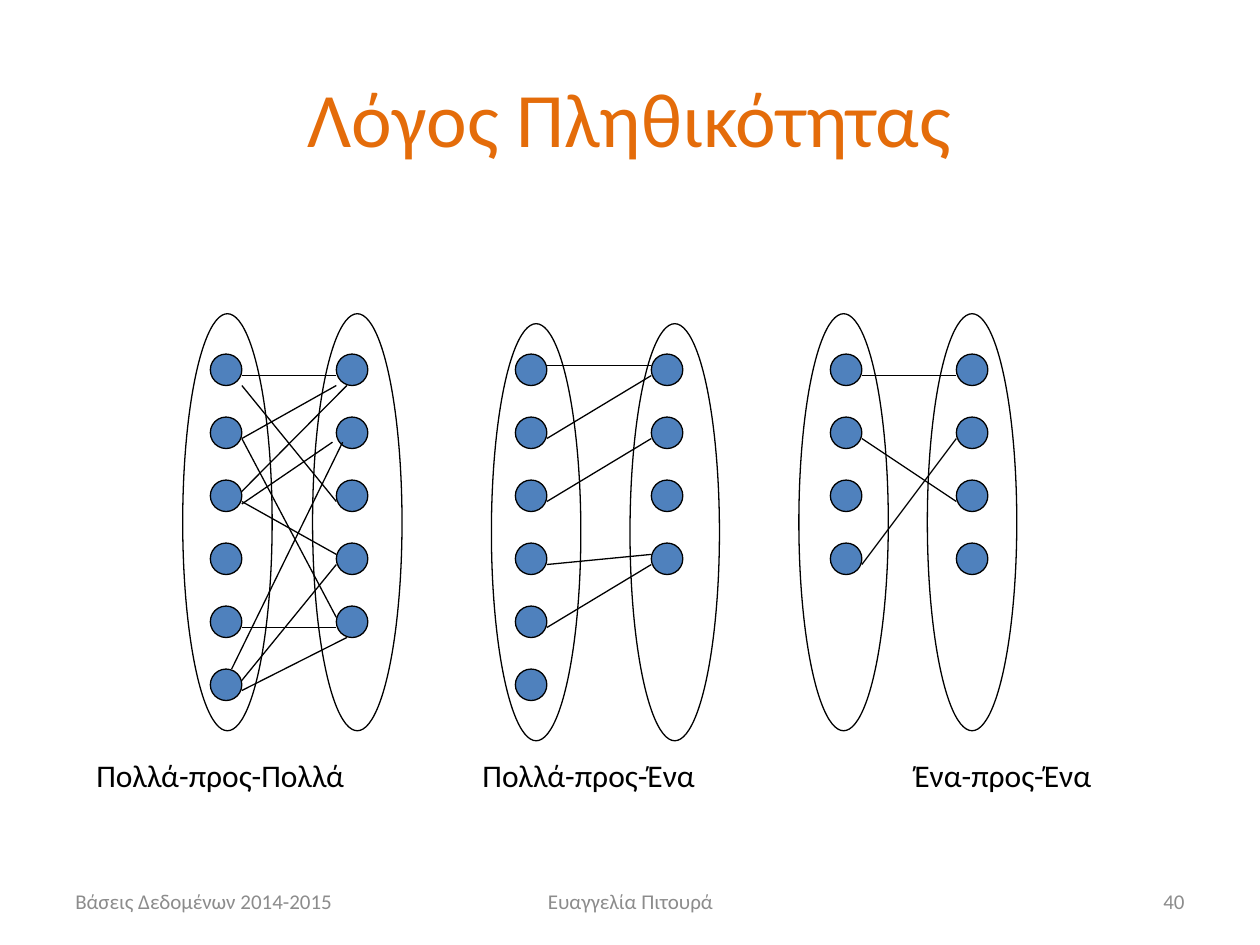
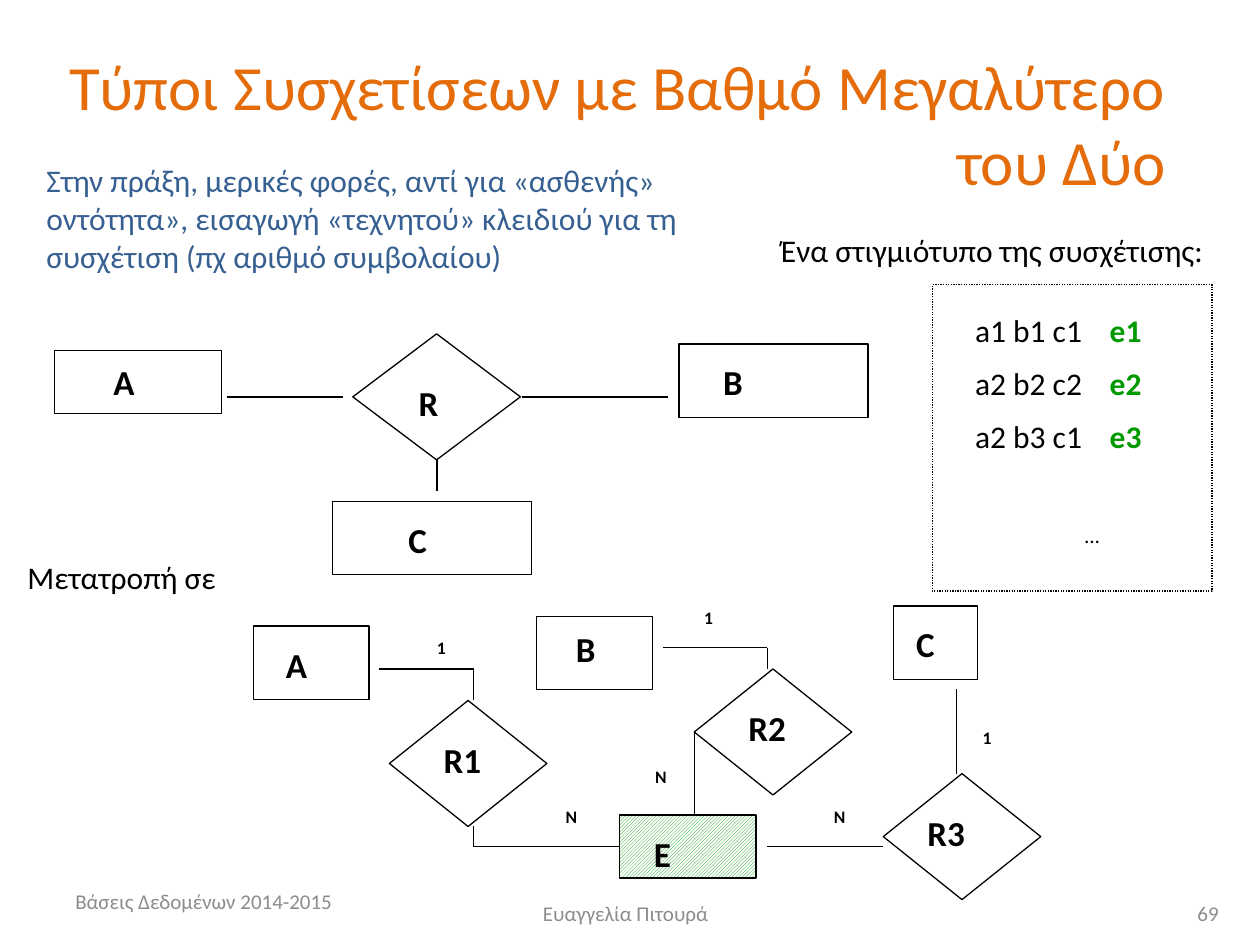
from itertools import pairwise

from lxml.etree import SubElement
from pptx import Presentation
from pptx.dml.color import RGBColor
from pptx.enum.dml import MSO_LINE, MSO_PATTERN
from pptx.enum.shapes import MSO_CONNECTOR, MSO_SHAPE
from pptx.enum.text import MSO_ANCHOR, PP_ALIGN
from pptx.oxml.ns import qn
from pptx.util import Pt

FONT = "Calibri"
COLORS = {
    name: RGBColor.from_string(code)
    for name, code in {
        "title": "E46C0A", "footer": "8C8C8C", "ink": "000000", "dot": "4F81BD",
        "remark": "376092", "key": "009900", "paper": "FFFFFF",
    }.items()
}
LEFT, CENTER, RIGHT = PP_ALIGN.LEFT, PP_ALIGN.CENTER, PP_ALIGN.RIGHT
OVAL, RECT, DIAMOND = MSO_SHAPE.OVAL, MSO_SHAPE.RECTANGLE, MSO_SHAPE.DIAMOND


def write(shape, text, size, color="ink", bold=False, align=LEFT, anchor=MSO_ANCHOR.TOP):
    """Fill a shape with one paragraph of wrapped text."""
    frame = shape.text_frame
    frame.word_wrap = True
    frame.vertical_anchor = anchor
    paragraph = frame.paragraphs[0]
    paragraph.text = text
    paragraph.alignment = align
    font = paragraph.font
    font.name, font.size, font.bold = FONT, Pt(size), bold
    font.color.rgb = COLORS[color]
    return paragraph


def outline(slide, kind, x, y, w, h, fill=None):
    """Add a thin black preset shape, or a straight line from (x, y) to (w, h) if kind is None."""
    if kind is None:
        item = slide.shapes.add_connector(MSO_CONNECTOR.STRAIGHT, Pt(x), Pt(y), Pt(w), Pt(h))
        SubElement(item._element.spPr, qn("a:effectLst"))
    else:
        item = slide.shapes.add_shape(kind, Pt(x), Pt(y), Pt(w), Pt(h))
        item.shadow.inherit = False
        if fill:
            item.fill.solid()
            item.fill.fore_color.rgb = COLORS[fill]
        else:
            item.fill.background()
    item.line.color.rgb = COLORS["ink"]
    item.line.width = Pt(0.75)
    return item


prs = Presentation()
prs.slide_width, prs.slide_height = Pt(720), Pt(540)

# Title and footer of each slide: boxes are x, y, width, height
pages = [
    ("Λόγος Πληθικότητας", 44, CENTER, (36, 21.6, 648, 90),
     "40", (246.2, 500.4, 228.2, 28.8), (516.2, 500.4, 167.8, 28.8)),
    ("Τύποι Συσχετίσεων με Βαθμό Μεγαλύτερο του Δύο", 36, RIGHT, (25.2, 0, 648, 140.4),
     "69", (241.2, 514.1, 232.6, 15.8), (535.7, 504, 167.8, 36)),
]
slides = []
for heading, size, align, title_box, number, author_box, number_box in pages:
    slide = prs.slides.add_slide(prs.slide_layouts[5])
    title = slide.shapes.title
    title.left, title.top, title.width, title.height = map(Pt, title_box)
    write(title, heading, size, "title", align=align, anchor=MSO_ANCHOR.MIDDLE)
    for text, box, side in [
        ("Βάσεις Δεδομένων 2014-2015", (36, 500.4, 167.8, 28.8), LEFT),
        ("Ευαγγελία Πιτουρά", author_box, CENTER),
        (number, number_box, RIGHT),
    ]:
        footer = slide.shapes.add_textbox(*map(Pt, box))
        write(footer, text, 12, "footer", align=side, anchor=MSO_ANCHOR.MIDDLE)
    slides.append(slide)
ratio_slide, degree_slide = slides

# Cardinality ratios: each set is (dot x, dot count, oval x);
# each link is (left y, right y) and, off the dots' edges, the two x shifts
DOT, DOT_TOP, DOT_STEP = 18, 202.3, 36
mappings = [
    ("Πολλά-προς-Πολλά", 48, 179.3, [(120.2, 6, 104.4), (192.2, 5, 178.6)],
     [(220.3, 286.6), (214.6, 214.6), (250.6, 220.3), (280.8, 220.3, 0, 6),
      (250.6, 352.8), (358.6, 358.6), (394.6, 364.3, 0, 6), (288, 252.7, 0, -2.2),
      (382.3, 252.7, -5.8, 3.6), (388.8, 322.6), (286.6, 316.8)]),
    ("Πολλά-προς-Ένα", 268.6, 185, [(294.5, 6, 280.8), (372.2, 4, 360)],
     [(208.8, 208.8), (250.6, 214.6), (286.6, 250.6), (358.6, 322.6), (322.6, 316.8)]),
    ("Ένα-προς-Ένα", 515.4, 179.3, [(474.5, 4, 456.5), (546.5, 4, 529.9)],
     [(214.6, 214.6), (250.6, 286.6), (322.6, 250.6)]),
]
for caption, caption_x, oval_y, sets, links in mappings:
    for dot_x, count, oval_x in sets:
        for row in range(count):
            outline(ratio_slide, OVAL, dot_x, DOT_TOP + row * DOT_STEP, DOT, DOT, "dot")
        outline(ratio_slide, OVAL, oval_x, oval_y, 51.1, 238.3)
    start_x, end_x = sets[0][0] + DOT, sets[1][0]
    for left_y, right_y, *shifts in links:
        left_shift, right_shift = shifts or (0, 0)
        outline(ratio_slide, None, start_x + left_shift, left_y, end_x + right_shift, right_y)
    label = ratio_slide.shapes.add_textbox(Pt(caption_x), Pt(428.4), Pt(170), Pt(28.8))
    write(label, caption, 18)

# Entities and relationships: kind, name, x, y, width, height, text indent, text drop
nodes = [
    (RECT, "A", 31, 200.2, 95.8, 36, 33.8, 5.8),
    (RECT, "B", 388.1, 196.6, 108, 41.8, 25.2, 9.4),
    (RECT, "C", 190.1, 286.6, 113.8, 41.8, 43.2, 9.4),
    (DIAMOND, "R", 201.6, 190.8, 95.8, 72, 13.7, 9.4),
    (RECT, "A", 144.7, 357.8, 66.2, 41.8, 18.7, 10),
    (RECT, "B", 306.7, 352.1, 66.2, 41.8, 22.3, 6.5),
    (RECT, "C", 510.5, 346.3, 48.2, 41.8, 13, 9.4),
    (DIAMOND, "R1", 222.5, 400.3, 90, 72, 8.5, 3.6),
    (DIAMOND, "R2", 396.7, 382.3, 90, 72, 8.5, 3.6),
    (DIAMOND, "R3", 504.7, 442.1, 90, 72, 2.7, 3.6),
    (RECT, "E", 354.2, 465.8, 77.8, 36, 19.4, 10),
]
for kind, name, x, y, w, h, indent, drop in nodes:
    node = outline(degree_slide, kind, x, y, w, h)
    frame = node.text_frame
    frame.margin_left, frame.margin_top = Pt(indent), Pt(drop)
    frame.margin_right = frame.margin_bottom = 0
    write(node, name, 20, bold=True)
    if name == "E":
        node.fill.patterned()
        node.fill.pattern = MSO_PATTERN.DARK_UPWARD_DIAGONAL
        node.fill.fore_color.rgb = COLORS["key"]
        node.fill.back_color.rgb = COLORS["paper"]

routes = [
    [(129.6, 226.8), (195.8, 226.8)],
    [(298.1, 226.8), (381.6, 226.8)],
    [(249.8, 262.8), (249.8, 280.8)],
    [(216.7, 382.3), (270.7, 382.3), (270.7, 400.3)],
    [(270.7, 472.3), (270.7, 483.8), (354.2, 483.8)],
    [(378.7, 370.1), (438.5, 370.1), (438.5, 382.3)],
    [(396.7, 418.3), (396.7, 465.8)],
    [(438.5, 483.8), (504.7, 483.8)],
]
for route in routes:
    for start, end in pairwise(route):
        outline(degree_slide, None, *start, *end)
outline(degree_slide, None, 546.5, 442.1, 546.5, 393.8).line.width = Pt(0.5)

for cardinality, x, y in [
    ("Ν", 316.1, 457.2), ("Ν", 367.2, 434.2), ("Ν", 469.4, 457.2),
    ("1", 242.6, 360.7), ("1", 395.3, 343.4), ("1", 554.4, 411.8),
]:
    label = degree_slide.shapes.add_textbox(Pt(x), Pt(y), Pt(22.3), Pt(19.4))
    write(label, cardinality, 10, bold=True)

for text, color, x, y, w, h in [
    ("Ένα στιγμιότυπο της συσχέτισης:", "ink", 439.2, 128.2, 262.1, 28.8),
    ("Στην πράξη, μερικές φορές, αντί για «ασθενής» οντότητα», εισαγωγή «τεχνητού» "
     "κλειδιού για τη συσχέτιση (πχ αριθμό συμβολαίου)", "remark", 19.4, 88.6, 414, 72.7),
    ("Μετατροπή σε", "ink", 8.6, 315.4, 365.8, 26.6),
]:
    remark = degree_slide.shapes.add_textbox(Pt(x), Pt(y), Pt(w), Pt(h))
    write(remark, text, 18, color)

# Instance of the relationship, with its artificial keys on a tab stop
outline(degree_slide, RECT, 532.8, 162.7, 159.8, 175).line.dash_style = MSO_LINE.ROUND_DOT
instance = degree_slide.shapes.add_textbox(Pt(550.1), Pt(174.2), Pt(169.9), Pt(100))
for row, (members, key) in enumerate([("a1 b1 c1", "e1"), ("a2 b2 c2", "e2"), ("a2 b3 c1", "e3")]):
    if row == 0:
        line = write(instance, members + "\t", 18)
    else:
        line = instance.text_frame.add_paragraph()
        line.text = members + "\t"
        line.font.name, line.font.size = FONT, Pt(18)
        line.font.color.rgb = COLORS["ink"]
        line.space_before = Pt(8.6)
    tabs = SubElement(line._p.get_or_add_pPr(), qn("a:tabLst"))
    SubElement(tabs, qn("a:tab"), pos=str(Pt(77)), algn="l")
    # The schema wants the tab list ahead of the default run properties
    defaults = line._p.pPr.find(qn("a:defRPr"))
    defaults.addprevious(tabs)
    key_run = line.add_run()
    key_run.text = key
    key_run.font.bold = True
    key_run.font.color.rgb = COLORS["key"]
more = degree_slide.shapes.add_textbox(Pt(604), Pt(295), Pt(40), Pt(22))
write(more, "…", 12, align=CENTER)

prs.save("out.pptx")
